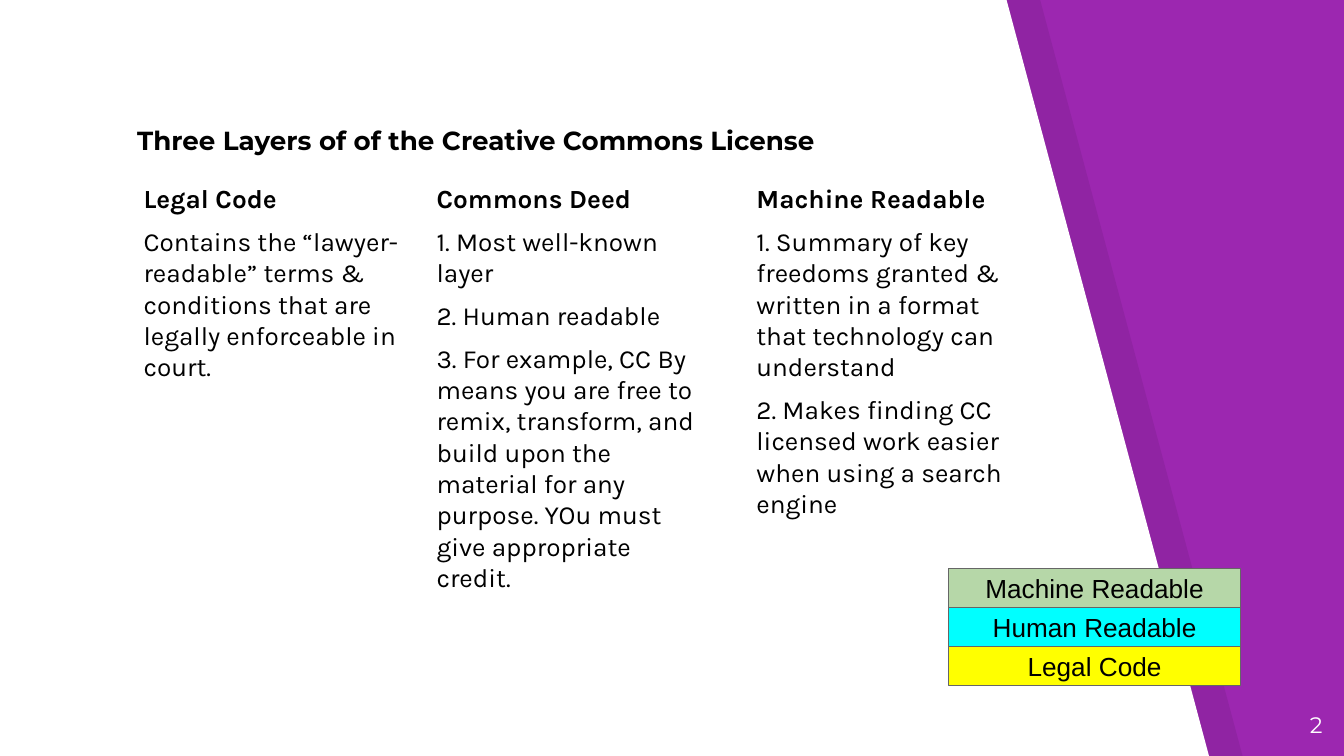
"""Build a slide on the three layers of the Creative Commons license."""
import pptx
import pptx.dml.color
import pptx.enum.shapes
import pptx.enum.text
import pptx.oxml.ns
import pptx.util
from lxml import etree

Pt = pptx.util.Pt
Align = pptx.enum.text.PP_ALIGN
Anchor = pptx.enum.text.MSO_ANCHOR

TITLE = "Three Layers of of the Creative Commons License"
PAGE_NUMBER = "2"
COLUMNS = [
    (69.84, "Legal Code", [
        "Contains the “lawyer-readable” terms & conditions that are legally enforceable in court.",
    ]),
    (226.8, "Commons Deed", [
        "1. Most well-known layer",
        "2. Human readable",
        "3. For example, CC By means you are free to remix, transform, and build upon "
        "the material for any purpose. YOu must give appropriate credit.",
    ]),
    (398.16, "Machine Readable", [
        "1. Summary of key freedoms granted & written in a format that technology can understand",
        "2. Makes finding CC licensed work easier when using a search engine",
    ]),
]
LAYERS = [("Machine Readable", "green"), ("Human Readable", "cyan"), ("Legal Code", "yellow")]

THEME = {
    "colors": {"purple": "9C27B0", "white": "FFFFFF", "black": "000000", "gray": "666666",
               "green": "B6D7A8", "cyan": "00FFFF", "yellow": "FFFF00"},
    "fonts": {"title": "Montserrat", "body": "Karla", "label": "Arial"},
    "sizes": {"text": 14, "number": 12},
}
PAGE_SIZE = (720, 405)
PANEL = [(0, -0.72), (0, 406.08), (648, 406.08), (539.28, 0)]
SHADE_OFFSET = 18
COLUMN_TOP, COLUMN_WIDTH, COLUMN_HEIGHT = 90.72, 156.24, 190.08
STACK_LEFT, STACK_TOP, LAYER_WIDTH, LAYER_HEIGHT = 508.32, 304.56, 156.24, 20.88


def color(name):
    return pptx.dml.color.RGBColor.from_string(THEME["colors"][name])


def place(shape, left, top, width, height):
    shape.left, shape.top, shape.width, shape.height = map(Pt, (left, top, width, height))


def write(shape, lines, font="body", size="text", ink="black", bold_lines=0,
          align=Align.LEFT, anchor=Anchor.TOP, before=0):
    frame = shape.text_frame
    frame.word_wrap = True
    frame.auto_size = pptx.enum.text.MSO_AUTO_SIZE.NONE
    frame.vertical_anchor = anchor
    frame.margin_left = frame.margin_right = frame.margin_top = frame.margin_bottom = Pt(7.2)
    for index, line in enumerate(lines):
        para = frame.add_paragraph() if index else frame.paragraphs[0]
        para.alignment = align
        para.space_before = Pt(before)
        span = para.add_run()
        span.text = line
        span.font.name = THEME["fonts"][font]
        span.font.size = Pt(THEME["sizes"][size])
        span.font.bold = index < bold_lines
        span.font.color.rgb = color(ink)


def add_panel(page, offset, fill, alpha=None):
    points = [(Pt(x + offset), Pt(y)) for x, y in PANEL]
    builder = page.shapes.build_freeform(*points[0], scale=1.0)
    builder.add_line_segments(points[1:], close=True)
    panel = builder.convert_to_shape()
    panel.shadow.inherit = False
    panel.fill.solid()
    panel.fill.fore_color.rgb = color(fill)
    panel.line.fill.background()
    if alpha is not None:
        tone = panel.element.spPr.find(".//" + pptx.oxml.ns.qn("a:srgbClr"))
        etree.SubElement(tone, pptx.oxml.ns.qn("a:alpha")).set("val", str(alpha * 1000))


def add_text_box(page, left, top, width, height, lines, **style):
    box = page.shapes.add_textbox(*map(Pt, (left, top, width, height)))
    write(box, lines, **style)


def add_layer(page, index, label, fill):
    layer = page.shapes.add_shape(pptx.enum.shapes.MSO_SHAPE.RECTANGLE, 0, 0, 0, 0)
    place(layer, STACK_LEFT, STACK_TOP + index * LAYER_HEIGHT, LAYER_WIDTH, LAYER_HEIGHT)
    layer.shadow.inherit = False
    layer.fill.solid()
    layer.fill.fore_color.rgb = color(fill)
    layer.line.color.rgb = color("gray")
    layer.line.width = Pt(0.75)
    write(layer, [label], font="label", align=Align.CENTER, anchor=Anchor.MIDDLE)


def main():
    deck = pptx.Presentation()
    deck.slide_width, deck.slide_height = map(Pt, PAGE_SIZE)
    page = deck.slides.add_slide(deck.slide_layouts[5])
    page.background.fill.solid()
    page.background.fill.fore_color.rgb = color("purple")

    add_panel(page, SHADE_OFFSET, "black", alpha=7)
    add_panel(page, 0, "white")

    title = page.shapes.title
    title.element.getparent().append(title.element)
    place(title, 66.24, 58.32, 378, 32.4)
    write(title, [TITLE], font="title", bold_lines=1, anchor=Anchor.BOTTOM)

    for left, heading, lines in COLUMNS:
        add_text_box(page, left, COLUMN_TOP, COLUMN_WIDTH, COLUMN_HEIGHT,
                     [heading] + lines, bold_lines=1, before=6)
    add_text_box(page, 672.48, 373.68, 43.2, 30.96, [PAGE_NUMBER],
                 font="title", size="number", ink="white", align=Align.RIGHT)
    for index, (label, fill) in reversed(list(enumerate(LAYERS))):
        add_layer(page, index, label, fill)

    deck.save("out.pptx")


if __name__ == "__main__":
    main()
